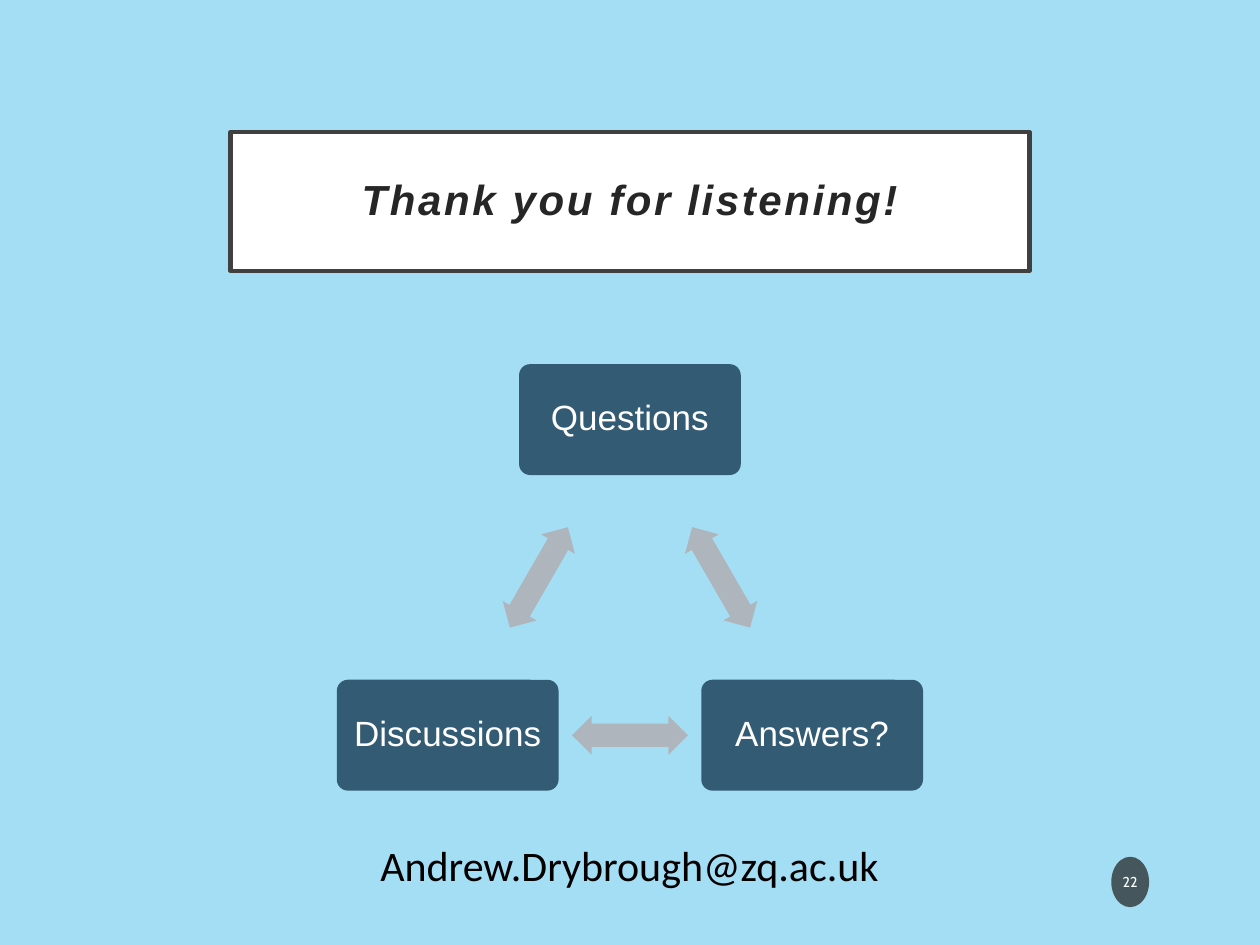
from math import cos, radians, sin

from lxml import etree
from pptx import Presentation
from pptx.dml.color import RGBColor
from pptx.enum.shapes import MSO_SHAPE
from pptx.enum.text import MSO_ANCHOR, PP_ALIGN
from pptx.oxml.ns import qn
from pptx.util import Inches, Pt

RECT, ROUND = MSO_SHAPE.RECTANGLE, MSO_SHAPE.ROUNDED_RECTANGLE
ARROW, OVAL = MSO_SHAPE.LEFT_RIGHT_ARROW, MSO_SHAPE.OVAL
CENTER, LEFT = PP_ALIGN.CENTER, PP_ALIGN.LEFT
MIDDLE, TOP = MSO_ANCHOR.MIDDLE, MSO_ANCHOR.TOP
W, H = 10, 7.5
CYCLE = ["Questions", "Answers?", "Discussions"]
CYCLE_X, CYCLE_Y, RADIUS = W / 2, H * 2 / 3, 1.67


def rgb(code):
    """Turn a hex string into a colour."""
    return RGBColor.from_string(code)


def write(sp, text, size=20, font="Arial", color="FFFFFF", bold=False, italic=False,
          align=CENTER, anchor=MIDDLE, inset=(0.1, 0.05), line_spacing=None, tracking=None):
    """Put one formatted paragraph into a shape."""
    tf = sp.text_frame
    tf.word_wrap = True
    tf.vertical_anchor = anchor
    tf.margin_left = tf.margin_right = Inches(inset[0])
    tf.margin_top = tf.margin_bottom = Inches(inset[1])
    p = tf.paragraphs[0]
    p.alignment = align
    if line_spacing:
        p.line_spacing = line_spacing
    r = p.add_run()
    r.text = text
    r.font.size, r.font.name = Pt(size), font
    r.font.bold, r.font.italic = bold, italic
    r.font.color.rgb = rgb(color)
    if tracking:
        r.font._element.set("spc", str(int(tracking * 100)))


def add_block(s, kind, cx, cy, w, h, fill, line=None, line_width=1, opacity=None):
    """Draw a filled preset shape around a centre point."""
    sp = s.shapes.add_shape(kind, Inches(cx - w / 2), Inches(cy - h / 2), Inches(w), Inches(h))
    sp.shadow.inherit = False
    sp.fill.solid()
    sp.fill.fore_color.rgb = rgb(fill)
    if line:
        sp.line.color.rgb = rgb(line)
        sp.line.width = Pt(line_width)
    else:
        sp.line.fill.background()
    if opacity:
        clr = sp._element.spPr.find(qn("a:solidFill")).find(qn("a:srgbClr"))
        etree.SubElement(clr, qn("a:alpha")).set("val", str(opacity * 1000))
    return sp


def on_circle(angle, radius):
    """Find a point of the cycle from its angle in degrees."""
    return CYCLE_X + radius * cos(radians(angle)), CYCLE_Y + radius * sin(radians(angle))


def add_cycle(s, labels):
    """Place boxes evenly on a circle with double arrows between them."""
    step = 360 / len(labels)
    for i, label in enumerate(labels):
        angle = i * step - 90
        box = add_block(s, ROUND, *on_circle(angle, RADIUS), 1.76, 0.88, "335B74")
        box.adjustments[0] = 0.1
        write(box, label, inset=(0.1, 0.1), line_spacing=0.9)

        middle = angle + step / 2
        arrow = add_block(s, ARROW, *on_circle(middle, RADIUS * cos(radians(step / 2))),
                          0.92, 0.31, "AEB5BC")
        arrow.adjustments[0], arrow.adjustments[1] = 0.6, 0.5
        arrow.rotation = middle + 90


def add_label(s, x, y, w, h, text, **fmt):
    """Add a text box with one paragraph."""
    write(s.shapes.add_textbox(Inches(x), Inches(y), Inches(w), Inches(h)), text, **fmt)


def main():
    """Build the closing slide."""
    prs = Presentation()
    prs.slide_width, prs.slide_height = Inches(W), Inches(H)
    s = prs.slides.add_slide(prs.slide_layouts[6])
    s.background.fill.solid()
    s.background.fill.fore_color.rgb = rgb("A4DEF4")

    title = add_block(s, RECT, W / 2, 1.6, 6.34, 1.1, "FFFFFF", line="404040", line_width=2.5)
    write(title, "Thank you for listening!", size=24, color="262626", bold=True, italic=True,
          inset=(0.2, 0.2), line_spacing=0.9, tracking=1.5)
    add_cycle(s, CYCLE)
    number = add_block(s, OVAL, 8.97, 7, 0.3, 0.4, "1D1D1D", opacity=70)
    write(number, "22", size=8.2, font="Cabin", inset=(0.02, 0.05))
    add_label(s, 2.92, 6.61, 4.56, 0.5, "Andrew.Drybrough@zq.ac.uk", size=24, font="Calibri",
              color="000000", align=LEFT, anchor=TOP)
    prs.save("out.pptx")


if __name__ == "__main__":
    main()
